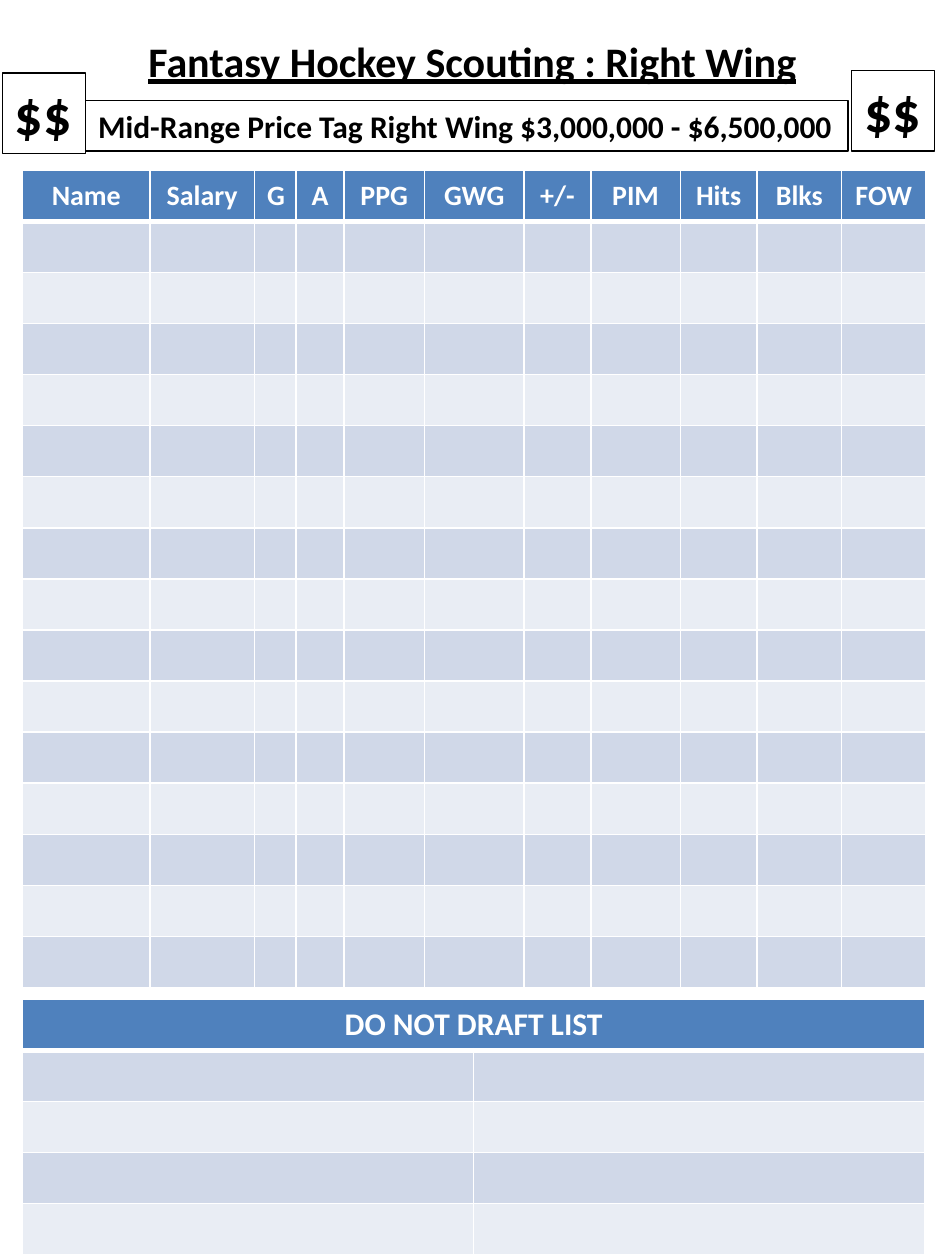
"""Build a one-page fantasy hockey scouting sheet for right wings."""
from lxml import etree
from pptx import Presentation
from pptx.dml.color import RGBColor
from pptx.enum.text import MSO_ANCHOR, MSO_AUTO_SIZE, PP_ALIGN
from pptx.oxml.ns import qn
from pptx.util import Inches, Pt

CENTER, LEFT = PP_ALIGN.CENTER, PP_ALIGN.LEFT
MIDDLE, TOP = MSO_ANCHOR.MIDDLE, MSO_ANCHOR.TOP
FIT_SHAPE, FIT_NONE = MSO_AUTO_SIZE.SHAPE_TO_FIT_TEXT, MSO_AUTO_SIZE.NONE

THEME = {
    "font": "Calibri",
    "ink": "000000",
    "paper": "FFFFFF",
    "header": "4F81BD",
    "bands": ("D0D8E8", "E9EDF4"),
    "title": 24,
    "badge": 32,
    "label": 18,
    "column": 16,
    "outline": 0.75,
    "grid": 1,
    "header_rule": 3,
}

TITLE = ("Fantasy Hockey Scouting : Right Wing", (0.56, 0.18, 6.38, 0.6))
BOXES = [
    ("Mid-Range Price Tag Right Wing $3,000,000 - $6,500,000", "label", (0.68, 0.8, 6.05, 0.4)),
    ("$$", "badge", (6.76, 0.56, 0.66, 0.64)),
    ("$$", "badge", (0.02, 0.58, 0.66, 0.64)),
]
TABLES = [
    {
        "headings": ["Name", "Salary", "G", "A", "PPG", "GWG", "+/-", "PIM", "Hits", "Blks", "FOW"],
        "widths": [1.01, 0.83, 0.33, 0.38, 0.64, 0.79, 0.53, 0.71, 0.61, 0.67, 0.67],
        "blank_rows": 15, "at": (0.18, 1.35), "height": 6.49, "size": "column", "anchor": MIDDLE,
    },
    {
        "headings": ["DO NOT DRAFT LIST"],
        "widths": [3.58, 3.58],
        "blank_rows": 4, "at": (0.18, 7.93), "height": 2.03, "size": "label", "anchor": TOP,
    },
]


def write(frame, text, size, color, align, **extra):
    para = frame.paragraphs[0]
    para.alignment = align
    span = para.add_run()
    span.text = text
    span.font.color.rgb = RGBColor.from_string(THEME[color])
    formats = {"name": THEME["font"], "size": Pt(THEME[size]), "bold": True, **extra}
    for name, value in formats.items():
        setattr(span.font, name, value)


def paint_cell(cell, color, top, bottom):
    cell.fill.solid()
    cell.fill.fore_color.rgb = RGBColor.from_string(color)
    properties = cell._tc.get_or_add_tcPr()
    widths = {"a:lnL": THEME["grid"], "a:lnR": THEME["grid"], "a:lnT": top, "a:lnB": bottom}
    for position, (side, width) in enumerate(widths.items()):
        line = etree.Element(qn(side), w=str(Pt(width)))
        fill = etree.SubElement(line, qn("a:solidFill"))
        etree.SubElement(fill, qn("a:srgbClr"), val=THEME["paper"])
        properties.insert(position, line)


def add_title(page):
    text, place = TITLE
    box = page.shapes.title
    box.left, box.top, box.width, box.height = map(Inches, place)
    frame = box.text_frame
    frame.auto_size = FIT_NONE
    frame.vertical_anchor = MIDDLE
    write(frame, text, "title", "ink", CENTER, underline=True)


def add_box(page, text, size, place):
    box = page.shapes.add_textbox(*map(Inches, place))
    box.line.color.rgb = RGBColor.from_string(THEME["ink"])
    box.line.width = Pt(THEME["outline"])
    frame = box.text_frame
    frame.word_wrap = False
    frame.auto_size = FIT_SHAPE
    write(frame, text, size, "ink", LEFT)


def add_grid(page, sheet):
    widths, headings = sheet["widths"], sheet["headings"]
    row_count = sheet["blank_rows"] + 1
    left, top = sheet["at"]
    size = map(Inches, (left, top, sum(widths), sheet["height"]))
    table = page.shapes.add_table(row_count, len(widths), *size).table
    for column, width in zip(table.columns, widths):
        column.width = Inches(width)
    for index, row in enumerate(table.rows):
        row.height = Inches(sheet["height"] / row_count)
        color = THEME["bands"][(index - 1) % 2] if index else THEME["header"]
        above = THEME["header_rule"] if index == 1 else THEME["grid"]
        below = THEME["grid"] if index else THEME["header_rule"]
        for cell in row.cells:
            paint_cell(cell, color, above, below)
    if len(headings) < len(widths):
        table.cell(0, 0).merge(table.cell(0, len(widths) - 1))
    for index, heading in enumerate(headings):
        cell = table.cell(0, index)
        cell.vertical_anchor = sheet["anchor"]
        write(cell.text_frame, heading, sheet["size"], "paper", CENTER)


def main():
    deck = Presentation()
    deck.slide_width, deck.slide_height = Inches(7.5), Inches(10)
    page = deck.slides.add_slide(deck.slide_layouts[0])
    subtitle = page.placeholders[1].element
    subtitle.getparent().remove(subtitle)
    add_title(page)
    for sheet in TABLES:
        add_grid(page, sheet)
    for text, size, place in BOXES:
        add_box(page, text, size, place)
    deck.save("out.pptx")


if __name__ == "__main__":
    main()
